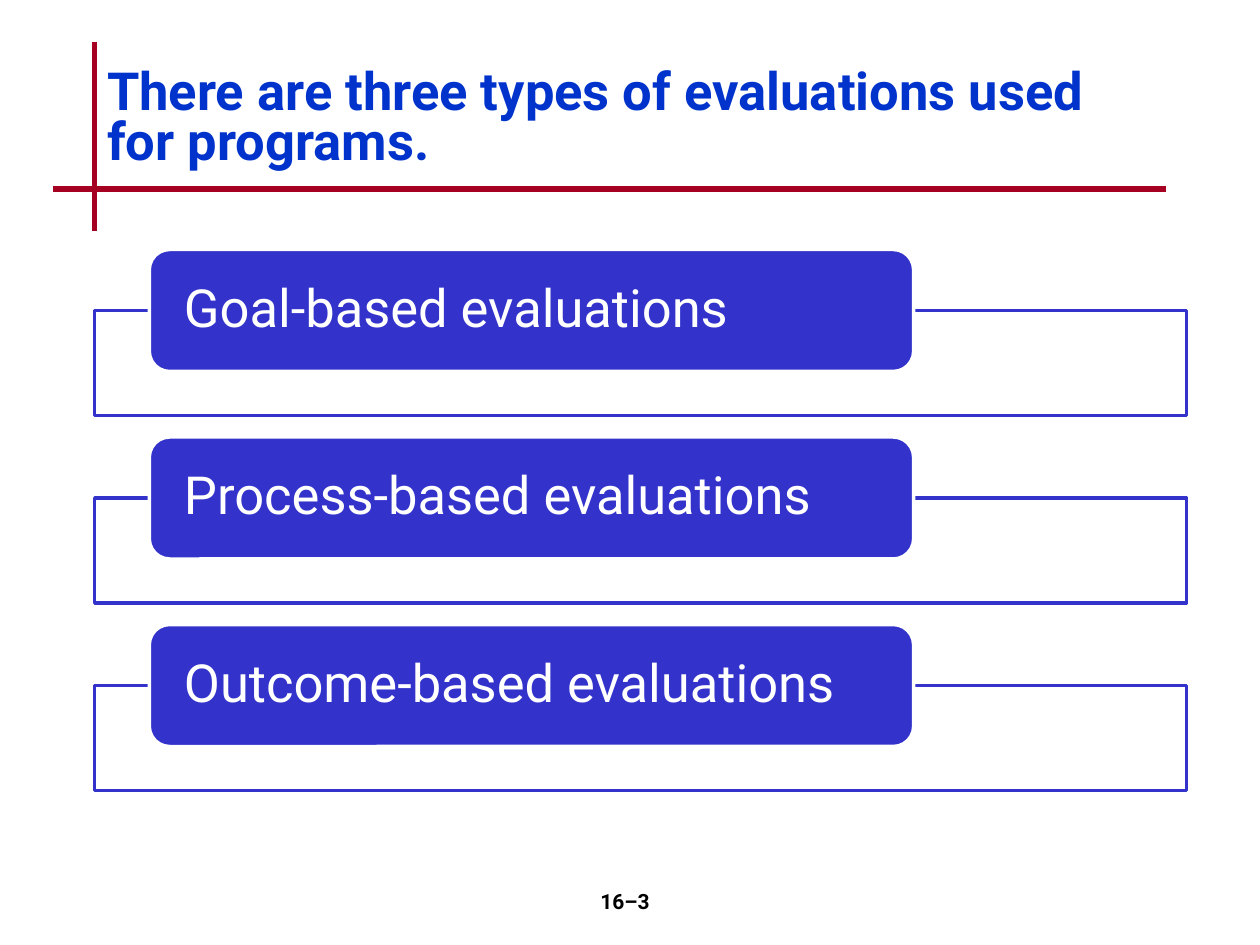
"""Build a slide that lists three types of program evaluation."""
from lxml.etree import SubElement
from pptx import Presentation
from pptx.dml.color import RGBColor
from pptx.enum.shapes import MSO_CONNECTOR, MSO_SHAPE
from pptx.enum.text import MSO_ANCHOR, PP_ALIGN
from pptx.oxml.ns import qn
from pptx.util import Cm, Pt

TITLE = "There are three types of evaluations used for programs."
TYPES = ["Goal-based evaluations", "Process-based evaluations", "Outcome-based evaluations"]
PAGE = "16–3"
RULES = [(1.91, 0.84, 1.91, 4.65), (1.07, 3.81, 23.5, 3.81)]
FONT = "Roboto"
RED = RGBColor(0xA5, 0x00, 0x21)
BLUE = RGBColor(0x00, 0x33, 0xCC)
INDIGO = RGBColor(0x33, 0x33, 0xCC)
WHITE = RGBColor(0xFF, 0xFF, 0xFF)
BLACK = RGBColor(0x00, 0x00, 0x00)
LEFT, TOP, STEP = 1.91, 5.03, 3.78


def write(shape, text, size, color, bold=False, align=PP_ALIGN.LEFT, space=1.0):
    frame = shape.text_frame
    frame.word_wrap = True
    line = frame.paragraphs[0]
    line.text = text
    line.alignment = align
    line.line_spacing = space
    font = line.font
    font.name, font.size, font.bold = FONT, Pt(size), bold
    font.color.rgb = color
    return frame


def add_rule(slide, ends):
    rule = slide.shapes.add_connector(MSO_CONNECTOR.STRAIGHT, *map(Cm, ends))
    rule.line.color.rgb = RED
    rule.line.width = Pt(3)
    SubElement(rule._element.spPr, qn("a:effectLst"))


def add_box(slide, kind, place, fill, edge):
    box = slide.shapes.add_shape(kind, *map(Cm, place))
    box.shadow.inherit = False
    box.fill.solid()
    box.fill.fore_color.rgb = fill
    box.line.color.rgb = edge
    box.line.width = Pt(2)
    return box


def add_type(slide, text, top):
    frame = add_box(slide, MSO_SHAPE.RECTANGLE, (LEFT, top + 1.23, 22.01, 2.12), WHITE, INDIGO)
    tint = frame._element.spPr.find(qn("a:solidFill"))[0]
    SubElement(tint, qn("a:alpha"), val="90000")
    label = add_box(slide, MSO_SHAPE.ROUNDED_RECTANGLE, (LEFT + 1.1, top, 15.41, 2.46), INDIGO, WHITE)
    body = write(label, text, 30, WHITE, space=0.9)
    body.vertical_anchor = MSO_ANCHOR.MIDDLE
    body.margin_left = body.margin_right = Cm(0.58)
    body.margin_top = body.margin_bottom = 0


def main():
    deck = Presentation()
    deck.slide_width, deck.slide_height = Cm(25.4), Cm(19.05)
    slide = deck.slides.add_slide(deck.slide_layouts[6])
    for ends in RULES:
        add_rule(slide, ends)
    for row, text in enumerate(TYPES):
        add_type(slide, text, TOP + row * STEP)
    title = slide.shapes.add_textbox(Cm(LEFT), Cm(0.84), Cm(21.59), Cm(3.18))
    write(title, TITLE, 30, BLUE, True, space=0.8).vertical_anchor = MSO_ANCHOR.MIDDLE
    page = slide.shapes.add_textbox(Cm(9.96), Cm(17.78), Cm(5.28), Cm(1.27))
    write(page, PAGE, 12, BLACK, True, PP_ALIGN.CENTER)
    deck.save("out.pptx")


if __name__ == "__main__":
    main()
